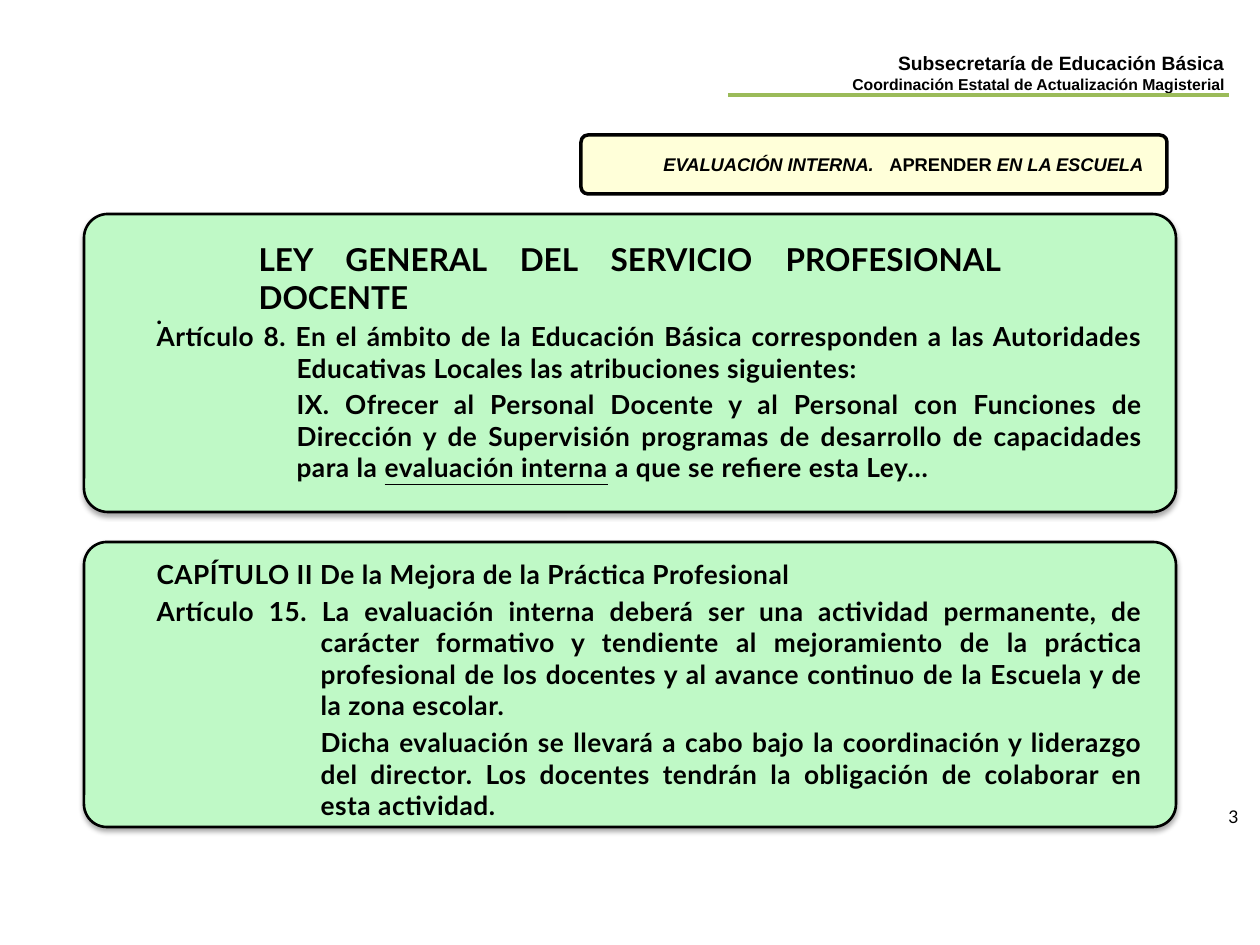
from dataclasses import dataclass

from lxml import etree
from pptx import Presentation
from pptx import util as u
from pptx.dml.color import RGBColor
from pptx.enum import shapes, text
from pptx.oxml import ns

EMU_PER_PX = 914400 / 126
ALIGN = text.PP_ALIGN
ANCHOR = text.MSO_ANCHOR


def px(length):
    return u.Emu(round(length * EMU_PER_PX))


@dataclass(frozen=True)
class Theme:
    ink: str = "000000"
    rule: str = "9BBB59"
    panel: str = "BFF9C6"
    banner: str = "FFFFD9"
    body_font: str = "Lato"
    label_font: str = "Arial"
    title_size: float = 18
    body_size: float = 15
    mark_size: float = 14
    header_size: float = 11
    banner_size: float = 10.5
    number_size: float = 10
    subheader_size: float = 9
    body_spacing: int = 30
    banner_gap: int = 580


class SlideBuilder:
    def __init__(self, slide, theme):
        self.slide = slide
        self.theme = theme

    def place(self, shape, box):
        shape.left, shape.top, shape.width, shape.height = map(px, box)

    def style(self, paragraph, size, font, align=ALIGN.LEFT, bold=True):
        paragraph.alignment = align
        paragraph.font.size = u.Pt(size)
        paragraph.font.name = font
        paragraph.font.bold = bold
        paragraph.font.color.rgb = RGBColor.from_string(self.theme.ink)

    def frame(self, shape, anchor=ANCHOR.TOP):
        frame = shape.text_frame
        frame.word_wrap = True
        frame.auto_size = text.MSO_AUTO_SIZE.NONE
        frame.vertical_anchor = anchor
        return frame

    def panel(self, box, radius, fill, line_width, shadow=False):
        shape = self.slide.shapes.add_shape(
            shapes.MSO_SHAPE.ROUNDED_RECTANGLE, *map(px, box))
        shape.adjustments[0] = radius
        shape.fill.solid()
        shape.fill.fore_color.rgb = RGBColor.from_string(fill)
        shape.line.color.rgb = RGBColor.from_string(self.theme.ink)
        shape.line.width = u.Pt(line_width)
        shape.shadow.inherit = False
        if shadow:
            effects = shape._element.spPr.find(ns.qn("a:effectLst"))
            outer = etree.SubElement(
                effects, ns.qn("a:outerShdw"), blurRad=str(u.Pt(3.1)),
                dist=str(u.Pt(1.8)), dir="5400000", rotWithShape="0")
            color = etree.SubElement(outer, ns.qn("a:srgbClr"), val=self.theme.ink)
            etree.SubElement(color, ns.qn("a:alpha"), val="35000")

    def rule(self, start, end, width):
        line = self.slide.shapes.add_connector(
            shapes.MSO_CONNECTOR.STRAIGHT, *map(px, start + end))
        line.line.color.rgb = RGBColor.from_string(self.theme.rule)
        line.line.width = u.Pt(width)
        etree.SubElement(line._element.spPr, ns.qn("a:effectLst"))

    def label(self, box, lines, font, align=ALIGN.LEFT, bold=True):
        shape = self.slide.shapes.add_textbox(*map(px, box))
        frame = self.frame(shape)
        for index, (words, size) in enumerate(lines):
            paragraph = frame.add_paragraph() if index else frame.paragraphs[0]
            paragraph.text = words
            self.style(paragraph, size, font, align, bold)

    def banner_text(self, box, runs):
        shape = self.slide.shapes.add_textbox(*map(px, box))
        paragraph = self.frame(shape, ANCHOR.MIDDLE).paragraphs[0]
        self.style(paragraph, self.theme.banner_size, self.theme.label_font, ALIGN.RIGHT)
        for words, italic in runs:
            run = paragraph.add_run()
            run.text = words
            run.font.italic = italic
            if words == " ":
                run.font._element.set("spc", str(self.theme.banner_gap))

    def bring_forward(self, shape):
        self.slide.shapes._spTree.append(shape._element)

    def title(self, box, words):
        shape = self.slide.shapes.title
        self.place(shape, box)
        self.bring_forward(shape)
        paragraph = self.frame(shape).paragraphs[0]
        paragraph.text = words
        self.style(paragraph, self.theme.title_size, self.theme.body_font, ALIGN.JUSTIFY)

    def body(self, index, box, paragraphs):
        shape = self.slide.placeholders[index]
        self.place(shape, box)
        self.bring_forward(shape)
        frame = self.frame(shape)
        for position, (margin, indent, runs) in enumerate(paragraphs):
            paragraph = frame.add_paragraph() if position else frame.paragraphs[0]
            properties = paragraph._p.get_or_add_pPr()
            properties.set("marL", str(px(margin)))
            properties.set("indent", str(px(indent)))
            etree.SubElement(properties, ns.qn("a:buNone"))
            self.style(paragraph, self.theme.body_size, self.theme.body_font, ALIGN.JUSTIFY)
            paragraph.space_before = u.Pt(3 if position else 0)
            for words, underline in runs:
                run = paragraph.add_run()
                run.text = words
                run.font._element.set("spc", str(self.theme.body_spacing))
                if underline:
                    run.font.underline = True


def main():
    theme = Theme()
    presentation = Presentation()
    presentation.slide_width, presentation.slide_height = px(1260), px(945)
    slide = presentation.slides.add_slide(presentation.slide_layouts[3])
    builder = SlideBuilder(slide, theme)

    builder.label((508, 45, 729, 55), [
        ("Subsecretaría de Educación Básica", theme.header_size),
        ("Coordinación Estatal de Actualización Magisterial", theme.subheader_size),
    ], theme.label_font, ALIGN.RIGHT)
    builder.rule((1229, 95), (728, 95), 2.25)

    builder.panel((84, 542, 1092, 285), 0.08, theme.panel, 1.5, shadow=True)
    builder.body(2, (144, 552, 1012, 287), [
        (0, 0, [("CAPÍTULO II De la Mejora de la Práctica Profesional", False)]),
        (164, -164, [("Artículo 15. La evaluación interna deberá ser una actividad "
                      "permanente, de carácter formativo y tendiente al mejoramiento "
                      "de la práctica profesional de los docentes y al avance continuo "
                      "de la Escuela y de la zona escolar.", False)]),
        (164, 0, [("Dicha evaluación se llevará a cabo bajo la coordinación y liderazgo "
                   "del director. Los docentes tendrán la obligación de colaborar en "
                   "esta actividad.", False)]),
    ])

    builder.panel((84, 214, 1092, 298), 0.08, theme.panel, 1.5, shadow=True)
    builder.body(1, (144, 314, 1012, 189), [
        (140, -140, [("Artículo 8. En el ámbito de la Educación Básica corresponden a las "
                      "Autoridades Educativas Locales las atribuciones siguientes:", False)]),
        (140, 0, [("IX. Ofrecer al Personal Docente y al Personal con Funciones de "
                   "Dirección y de Supervisión programas de desarrollo de capacidades "
                   "para la ", False),
                  ("evaluación interna", True),
                  (" a que se refiere esta Ley…", False)]),
    ])
    builder.label((144, 294, 932, 43), [(".", theme.mark_size)], theme.body_font)
    builder.title((246, 234, 767, 50), "LEY GENERAL DEL SERVICIO PROFESIONAL DOCENTE")

    builder.label((1216, 800, 44, 34), [("3", theme.number_size)], theme.body_font, bold=False)
    builder.panel((581, 135, 586, 59), 0.12, theme.banner, 2)
    builder.banner_text((600, 135, 556, 59), [
        ("EVALUACIÓN INTERNA.", True),
        (" ", True),
        ("APRENDER", False),
        (" EN LA ESCUELA", True),
    ])
    presentation.save("out.pptx")


if __name__ == "__main__":
    main()
